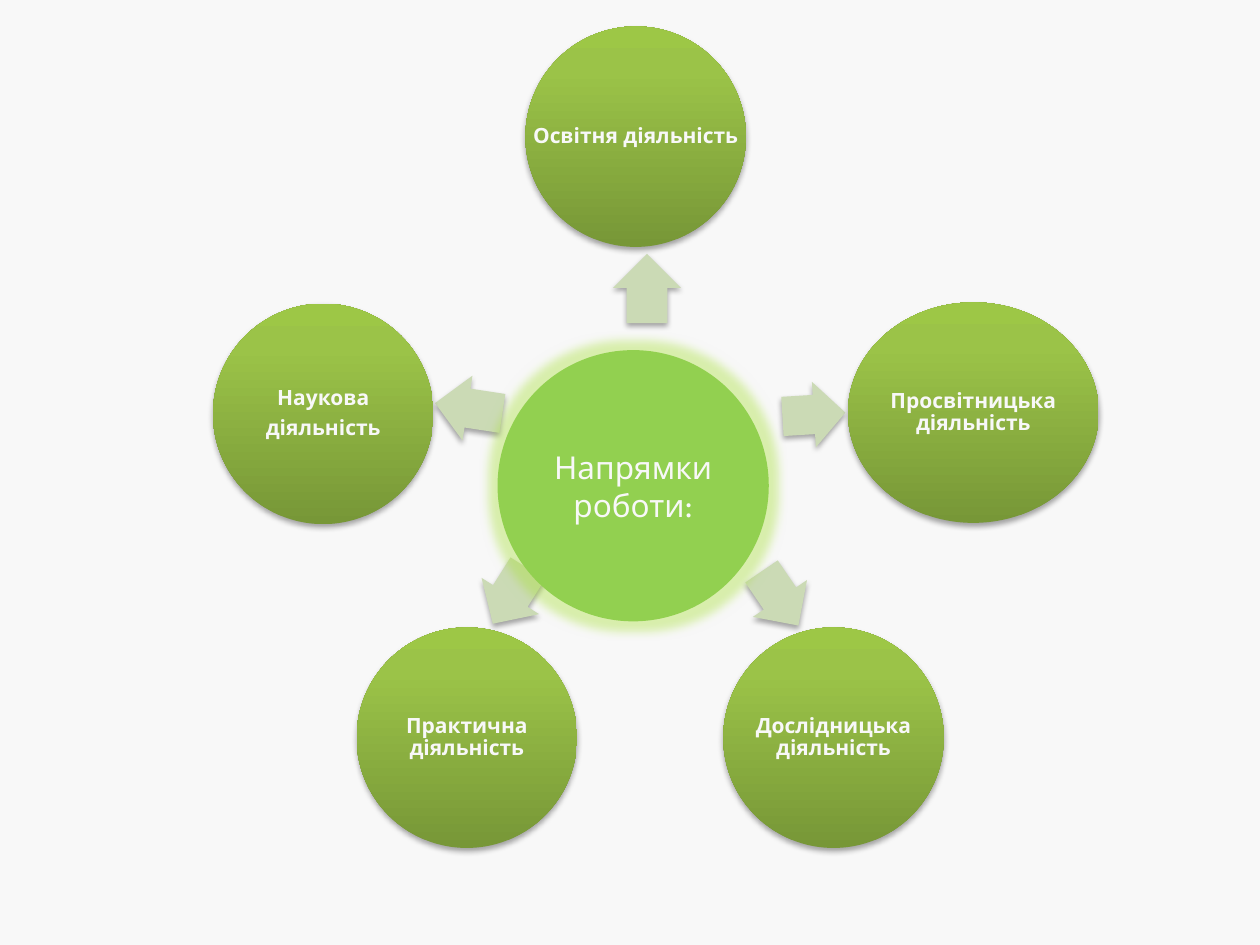
from copy import deepcopy

from pptx import Presentation
from pptx.dml.color import RGBColor
from pptx.enum.shapes import MSO_SHAPE
from pptx.enum.text import MSO_ANCHOR, PP_ALIGN
from pptx.oxml import parse_xml
from pptx.oxml.ns import nsdecls, qn
from pptx.util import Inches, Pt

OVAL = MSO_SHAPE.OVAL
RIGHT_ARROW = MSO_SHAPE.RIGHT_ARROW
MIDDLE = MSO_ANCHOR.MIDDLE
CENTER = PP_ALIGN.CENTER

OFF_WHITE = RGBColor(0xF8, 0xF8, 0xF8)
GREEN = RGBColor(0x92, 0xD0, 0x50)
PALE_GREEN = RGBColor(0xCB, 0xDA, 0xB5)
GRADIENT = [
    (0, RGBColor(0x77, 0x97, 0x37)),
    (0.8, RGBColor(0x9B, 0xC3, 0x48)),
    (1, RGBColor(0x9D, 0xC7, 0x46)),
]
FONT = "League Spartan"
SHADOW = (
    f'<a:outerShdw {nsdecls("a")} blurRad="40000" dist="23000" dir="5400000" rotWithShape="0">'
    '<a:srgbClr val="000000"><a:alpha val="35000"/></a:srgbClr></a:outerShdw>'
)
GLOW = (
    f'<a:glow {nsdecls("a")} rad="139700">'
    '<a:srgbClr val="A8E03A"><a:alpha val="40000"/></a:srgbClr></a:glow>'
)


def add_figure(kind, box, effect):
    figure = slide.shapes.add_shape(kind, *map(Inches, box))
    figure.line.fill.background()
    figure.shadow.inherit = False
    figure._element.spPr.find(qn("a:effectLst")).append(parse_xml(effect))
    return figure


def write_text(holder, text, size, bold=False, spacing=1, after=0, margin=None):
    frame = holder.text_frame
    frame.word_wrap = True
    frame.vertical_anchor = MIDDLE
    if margin is not None:
        frame.margin_left = frame.margin_right = margin
        frame.margin_top = frame.margin_bottom = margin
    frame.text = text
    for paragraph in frame.paragraphs:
        paragraph.alignment = CENTER
        paragraph.line_spacing = spacing
        paragraph.space_after = Pt(after)
        for run in paragraph.runs:
            run.font.name = FONT
            run.font.size = Pt(size)
            run.font.bold = bold
            run.font.color.rgb = OFF_WHITE


prs = Presentation()
prs.slide_width = Inches(10)
prs.slide_height = Inches(7.5)
slide = prs.slides.add_slide(prs.slide_layouts[6])
slide.background.fill.solid()
slide.background.fill.fore_color.rgb = OFF_WHITE

activities = [
    ("Освітня діяльність", (4.17, 0.21, 1.75, 1.75), (4.86, 2.02, 0.55, 0.54), 270),
    ("Просвітницька діяльність", (6.73, 2.4, 1.99, 1.75), (6.21, 3.03, 0.5, 0.52), 356.5),
    ("Дослідницька діяльність", (5.74, 4.98, 1.75, 1.75), (5.93, 4.49, 0.52, 0.52), 55.7),
    ("Практична діяльність", (2.83, 4.98, 1.75, 1.75), (3.79, 4.46, 0.52, 0.54), 122.2),
    ("Наукова\nдіяльність", (1.69, 2.41, 1.75, 1.75), (3.45, 2.98, 0.54, 0.52), 188.7),
]

for activity, circle_box, arrow_box, angle in activities:
    arrow = add_figure(RIGHT_ARROW, arrow_box, SHADOW)
    arrow.adjustments[0] = 0.6
    arrow.adjustments[1] = 0.5
    arrow.rotation = angle
    arrow.fill.solid()
    arrow.fill.fore_color.rgb = PALE_GREEN

    circle = add_figure(OVAL, circle_box, SHADOW)
    circle.fill.gradient()
    circle.fill.gradient_angle = 90
    stop_list = circle._element.spPr.find(".//" + qn("a:gsLst"))
    stop_list.append(deepcopy(stop_list[1]))
    for stop, (position, color) in zip(circle.fill.gradient_stops, GRADIENT):
        stop.position = position
        stop.color.rgb = color

    label = slide.shapes.add_textbox(*map(Inches, circle_box))
    write_text(label, activity, size=12, bold=True, spacing=0.9, after=4.2, margin=Inches(0.02))

hub = add_figure(OVAL, (3.98, 2.81, 2.09, 2.09), GLOW)
hub.fill.solid()
hub.fill.fore_color.rgb = GREEN
hub.line.color.rgb = GREEN
hub.line.width = Pt(4.5)
write_text(hub, "Напрямки роботи:", size=18)

prs.save("out.pptx")
